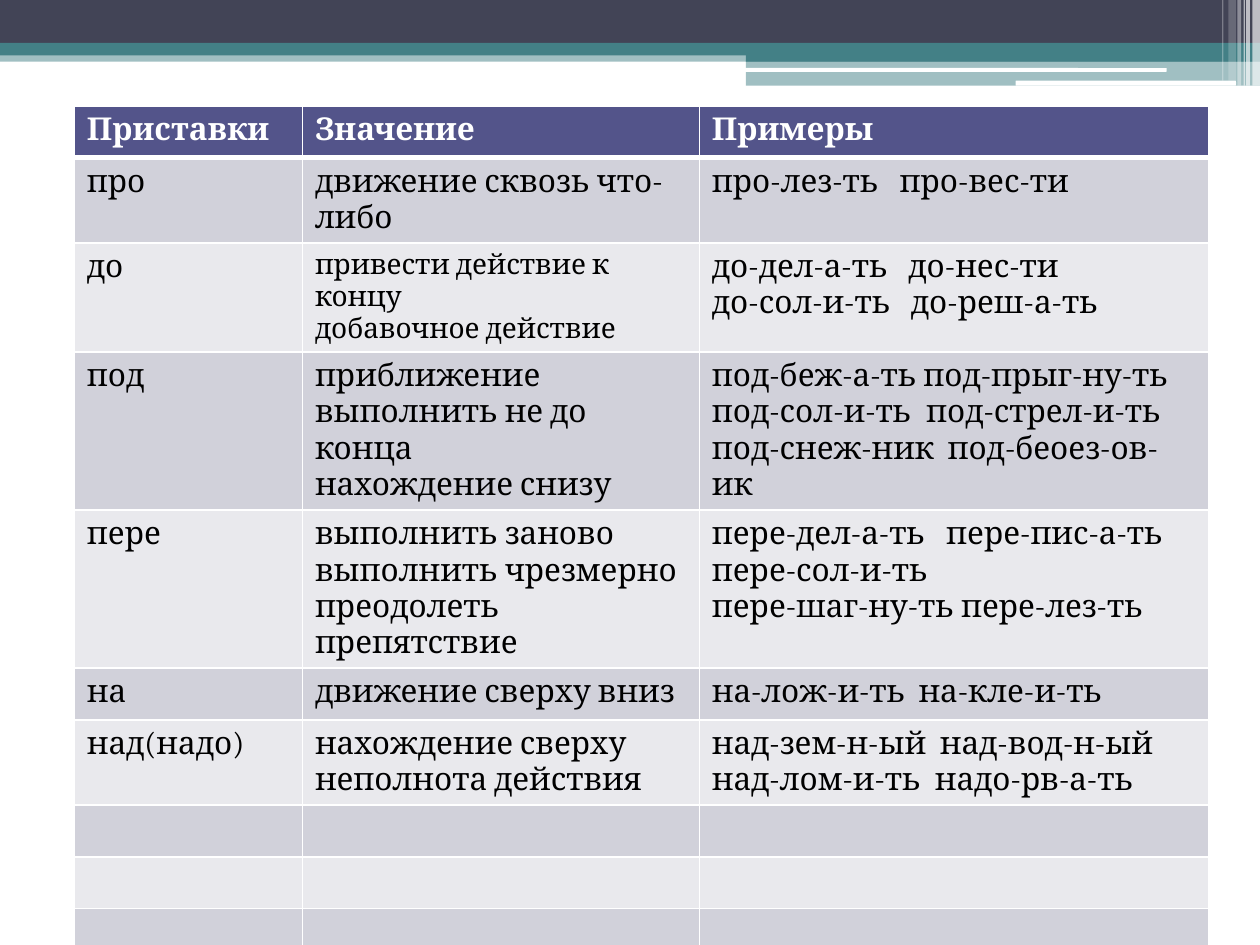
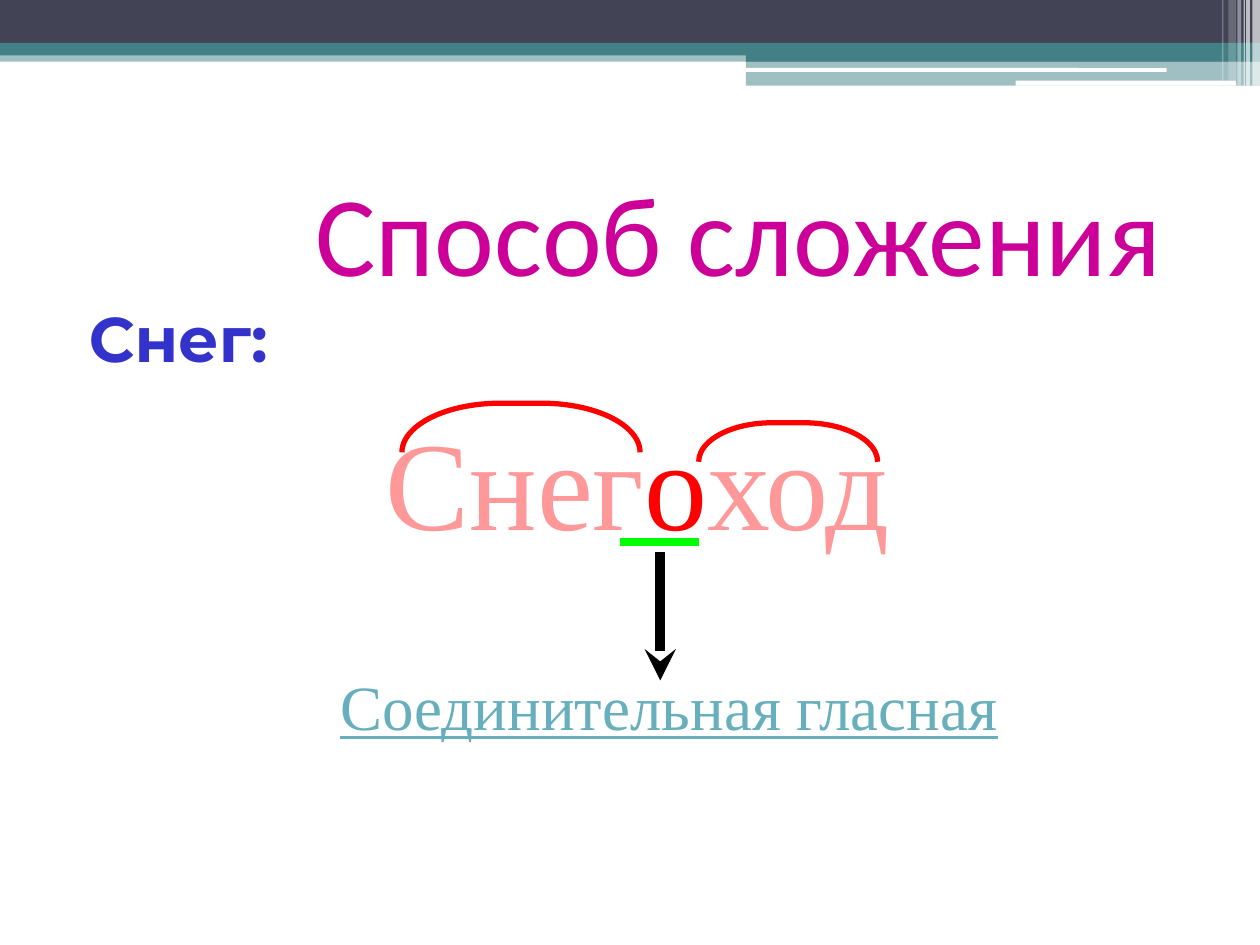
from lxml import etree
from pptx import Presentation
from pptx.dml.color import RGBColor
from pptx.enum.shapes import MSO_CONNECTOR, MSO_SHAPE
from pptx.enum.text import MSO_ANCHOR, MSO_AUTO_SIZE, PP_ALIGN
from pptx.oxml.ns import qn
from pptx.util import Inches, Pt

RECT, ROUND = MSO_SHAPE.RECTANGLE, MSO_SHAPE.ROUNDED_RECTANGLE
BRACKET = MSO_SHAPE.LEFT_BRACKET
STRAIGHT = MSO_CONNECTOR.STRAIGHT
LEFT, CENTER = PP_ALIGN.LEFT, PP_ALIGN.CENTER
MIDDLE = MSO_ANCHOR.MIDDLE
NO_FIT = MSO_AUTO_SIZE.NONE

WHITE = RGBColor(0xFF, 0xFF, 0xFF)
BLACK = RGBColor(0x00, 0x00, 0x00)
SLATE = RGBColor(0x42, 0x44, 0x56)
TEAL = RGBColor(0x43, 0x80, 0x86)
LIGHT_TEAL = RGBColor(0x67, 0xAF, 0xBD)
VIOLET = RGBColor(0x53, 0x54, 0x8A)
BAND_DARK = RGBColor(0xD1, 0xD1, 0xDA)
BAND_LIGHT = RGBColor(0xE9, 0xE9, 0xED)
MAGENTA = RGBColor(0xCC, 0x00, 0x99)
PINK = RGBColor(0xFF, 0x99, 0x99)
RED = RGBColor(0xFF, 0x00, 0x00)
GREEN = RGBColor(0x00, 0xFF, 0x00)
BLUE = RGBColor(0x33, 0x33, 0xCC)


def add_run(p, text, color, **font):
    r = p.add_run()
    r.text = text
    r.font.color.rgb = color
    for key, value in font.items():
        setattr(r.font, key, value)


def sub(parent, tag, **attrs):
    return etree.SubElement(parent, qn(tag), attrs)


prs = Presentation()
prs.slide_width, prs.slide_height = Inches(10), Inches(7.5)

s = prs.slides.add_slide(prs.slide_layouts[6])
master_tree = prs.slide_master.shapes.element
bands = [
    (RECT, 0, 0.4, 10, 0.09, TEAL, 50),
    (RECT, 0, 0, 10, 0.34, SLATE, 100),
    (RECT, 0, 0.34, 10, 0.1, TEAL, 100),
    (RECT, 5.92, 0.39, 4.08, 0.1, TEAL, 100),
    (RECT, 5.92, 0.48, 4.08, 0.2, TEAL, 50),
    (ROUND, 5.91, 0.54, 3.35, 0.03, WHITE, 100),
    (ROUND, 8.06, 0.64, 1.75, 0.04, WHITE, 100),
    (RECT, 9.94, 0, 0.06, 0.68, WHITE, 65),
    (RECT, 9.89, 0, 0.03, 0.68, WHITE, 65),
    (RECT, 9.87, 0, 0.01, 0.68, WHITE, 60),
    (RECT, 9.82, 0, 0.03, 0.68, WHITE, 40),
    (RECT, 9.75, 0, 0.06, 0.64, WHITE, 20),
    (RECT, 9.7, 0, 0.01, 0.64, WHITE, 30),
]
for i, (kind, x, y, w, h, color, alpha) in enumerate(bands):
    sp = s.shapes.add_shape(kind, Inches(x), Inches(y), Inches(w), Inches(h))
    sp.shadow.inherit = False
    sp.fill.solid()
    sp.fill.fore_color.rgb = color
    sp.line.fill.background()
    if alpha < 100:
        clr = sp.element.spPr.find(qn("a:solidFill"))[0]
        sub(clr, "a:alpha", val=str(alpha * 1000))
    sp.element.nvSpPr.cNvPr.set("id", str(20 + i))
    sp.name = f"Band {i + 1}"
    master_tree.append(sp.element)

rows = [
    ("Приставки", ["Значение"], ["Примеры"], []),
    ("про", ["движение сквозь что-либо"], ["про-лез-ть\tпро-вес-ти"], [1.49]),
    ("до", ["привести действие к концу", "добавочное действие"],
     ["до-дел-а-ть\tдо-нес-ти", "до-сол-и-ть\tдо-реш-а-ть"], [1.56, 1.58]),
    ("под", ["приближение", "выполнить не до конца", "нахождение снизу"],
     ["под-беж-а-ть под-прыг-ну-ть", "под-сол-и-ть\tпод-стрел-и-ть",
      "под-снеж-ник\tпод-беоез-ов-ик"], [0, 1.7, 1.87]),
    ("пере", ["выполнить заново выполнить чрезмерно", "преодолеть препятствие"],
     ["пере-дел-а-ть\tпере-пис-а-ть", "пере-сол-и-ть",
      "пере-шаг-ну-ть пере-лез-ть"], [1.86]),
    ("на", ["движение сверху вниз"], ["на-лож-и-ть\tна-кле-и-ть"], [1.64]),
    ("над(надо)", ["нахождение сверху", "неполнота действия"],
     ["над-зем-н-ый\tнад-вод-н-ый", "над-лом-и-ть\tнадо-рв-а-ть"], [1.81, 1.77]),
    ("", [], [], []),
    ("", [], [], []),
    ("", [], [], []),
]
frame = s.shapes.add_table(len(rows), 3, Inches(0.59), Inches(0.84), Inches(9), Inches(4.1))
table = frame.table
for col, width in zip(table.columns, (1.81, 3.15, 4.04)):
    col.width = Inches(width)
for i, (prefix, meanings, examples, tabs) in enumerate(rows):
    table.rows[i].height = Inches(0.41)
    header = i == 0
    for j, lines in enumerate(([prefix] if prefix else [], meanings, examples)):
        cell = table.cell(i, j)
        tcPr = cell._tc.get_or_add_tcPr()
        for side in "LRTB":
            width = Pt(3) if (header and side == "B") or (i == 1 and side == "T") else Pt(1)
            ln = sub(tcPr, f"a:ln{side}", w=str(width))
            sub(sub(ln, "a:solidFill"), "a:srgbClr", val=str(WHITE))
        cell.fill.solid()
        cell.fill.fore_color.rgb = VIOLET if header else (BAND_LIGHT, BAND_DARK)[i % 2]
        tf = cell.text_frame
        size = Pt(16) if prefix == "до" and j == 1 else Pt(18)
        if not lines:
            tf.paragraphs[0].font.size = size
        for n, line in enumerate(lines):
            p = tf.paragraphs[0] if n == 0 else tf.add_paragraph()
            if "\t" in line:
                tab_list = sub(p._p.get_or_add_pPr(), "a:tabLst")
                sub(tab_list, "a:tab", pos=str(Inches(tabs[n])), algn="l")
            add_run(p, line, WHITE if header else BLACK, size=size, name="Cambria", bold=header)

s = prs.slides.add_slide(prs.slide_layouts[1])
title, body = s.placeholders
for ph, x, y, w, h in ((title, 2.4, 1.25, 7.1, 1.17), (body, 0.5, 3.16, 9, 3.51)):
    ph.left, ph.top, ph.width, ph.height = Inches(x), Inches(y), Inches(w), Inches(h)
    ph.text_frame.auto_size = NO_FIT
title.text_frame.vertical_anchor = MIDDLE
p = title.text_frame.paragraphs[0]
p.alignment = LEFT
add_run(p, "Способ сложения", MAGENTA, size=Pt(64.8), name="Calibri")

word = [("Снег", PINK), ("о", RED), ("ход", PINK)]
label = [("Соединительная гласная", LIGHT_TEAL)]
tf = body.text_frame
for n, (runs, size, margin, before) in enumerate(((word, 72, 0.4, 0), (label, 36, 0.9, 64))):
    p = tf.paragraphs[0] if n == 0 else tf.add_paragraph()
    pPr = p._p.get_or_add_pPr()
    pPr.set("marL", str(Inches(margin)))
    pPr.set("indent", str(Inches(-0.28)))
    sub(pPr, "a:buNone")
    p.alignment = CENTER
    p.space_before = Pt(before)
    for text, color in runs:
        add_run(p, text, color, size=Pt(size), name="Times New Roman", underline=runs is label)

tb = s.shapes.add_textbox(Inches(0.59), Inches(2.33), Inches(1.65), Inches(0.71))
tb.text_frame.word_wrap = False
p = tb.text_frame.paragraphs[0]
p.alignment = CENTER
add_run(p, "Снег:", BLUE, size=Pt(36), name="Montserrat", bold=True)

for x, y, w, h, curve in ((3.94, 2.45, 0.39, 1.89, 2), (6.1, 2.8, 0.31, 1.42, 1.88)):
    sp = s.shapes.add_shape(BRACKET, Inches(x), Inches(y), Inches(w), Inches(h))
    sp.shadow.inherit = False
    sp.rotation = 90
    sp.adjustments[0] = curve
    sp.fill.background()
    sp.line.color.rgb = RED
    sp.line.width = Pt(3)

for x1, y1, x2, y2, color, width, arrow in (
        (5.24, 4.38, 5.24, 5.4, BLACK, 6, True),
        (4.92, 4.3, 5.55, 4.3, GREEN, 4.5, False)):
    line = s.shapes.add_connector(STRAIGHT, Inches(x1), Inches(y1), Inches(x2), Inches(y2))
    line.line.color.rgb = color
    line.line.width = Pt(width)
    if arrow:
        sub(line.line._get_or_add_ln(), "a:tailEnd", type="stealth")
    sub(line.element.spPr, "a:effectLst")

prs.save("out.pptx")
